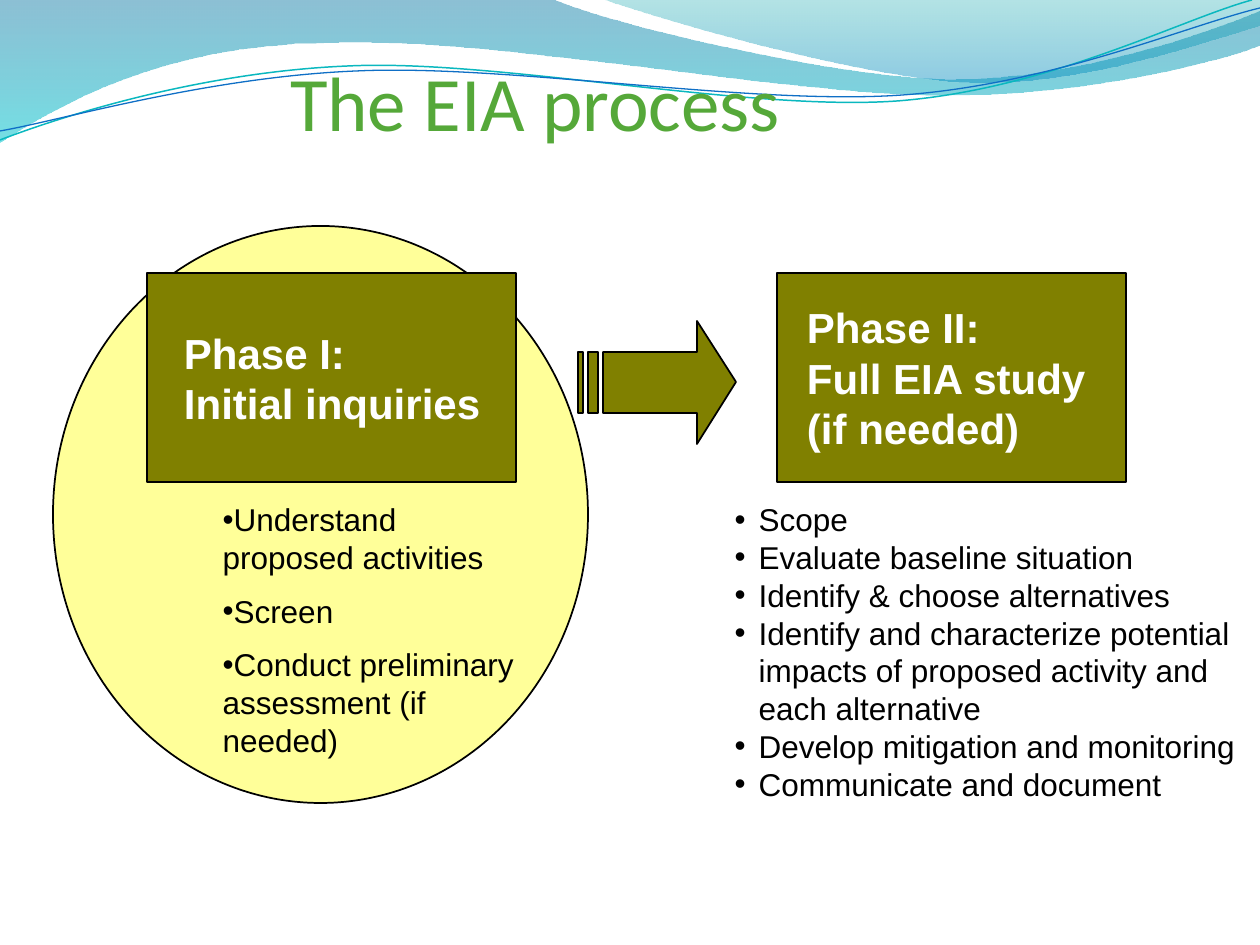
from dataclasses import dataclass

from lxml import etree
from pptx import Presentation
from pptx.dml.color import RGBColor
from pptx.enum.shapes import MSO_SHAPE
from pptx.enum.text import MSO_ANCHOR, MSO_AUTO_SIZE, PP_ALIGN
from pptx.oxml.ns import qn
from pptx.util import Emu, Pt

OVAL, RECTANGLE = MSO_SHAPE.OVAL, MSO_SHAPE.RECTANGLE
MIDDLE, BOTTOM, TOP = MSO_ANCHOR.MIDDLE, MSO_ANCHOR.BOTTOM, MSO_ANCHOR.TOP
LEFT, CENTER = PP_ALIGN.LEFT, PP_ALIGN.CENTER
TWO_CONTENT = 3


def px(length: float) -> Emu:
    return Emu(round(length * 914400 / 126))


@dataclass(frozen=True)
class Theme:
    title: str = "55A839"
    ink: str = "000000"
    light: str = "FFFFFF"
    olive: str = "808000"
    yellow: str = "FFFF99"
    title_font: str = "Calibri"
    body_font: str = "Arial"
    title_size: int = 44
    phase_size: int = 24
    list_size: int = 18


THEME = Theme()


@dataclass(frozen=True)
class Frame:
    left: int
    top: int
    width: int
    height: int

    def emu(self) -> tuple:
        return tuple(map(px, (self.left, self.top, self.width, self.height)))


@dataclass(frozen=True)
class Stop:
    color: str
    opacity: int


@dataclass(frozen=True)
class Wave:
    """Start point, then steps: 2 numbers are a line, 6 a Bézier curve."""
    start: tuple
    steps: tuple
    stops: tuple = ()
    line: str = ""
    weight: float = 0


@dataclass(frozen=True)
class Phase:
    heading: str
    box: Frame
    inset: int
    items: tuple
    list_frame: Frame
    margin: int = 0
    hanging: int = 0
    gap: int = 0


WAVES = (
    Wave((0, 0), ((554, 0), (600, 21, 837, 79, 955, 79),
                  (1074, 79, 1207, 33, 1260, 11), (1260, 45),
                  (1239, 55, 1096, 96, 940, 95), (783, 95, 481, 35, 324, 43),
                  (163, 45, 58, 105, 0, 142)),
         stops=(Stop("0074A1", 45), Stop("00C6CF", 55))),
    Wave((604, 0), ((642, 14, 859, 78, 969, 82),
                    (1079, 87, 1211, 40, 1260, 26), (1260, 0)),
         stops=(Stop("00A1A9", 30), Stop("008BBF", 45))),
    Wave((0, 140), ((60, 117, 199, 72, 349, 66),
                    (498, 59, 747, 112, 898, 101),
                    (1050, 89, 1182, 19, 1252, 0)),
         line="0AB8BF", weight=0.85),
    Wave((0, 131), ((59, 121, 207, 77, 357, 71),
                    (508, 64, 752, 106, 903, 95),
                    (1053, 84, 1186, 26, 1260, 8)),
         line="0F6FC6", weight=0.75),
)

PHASES = (
    Phase("Phase I:\nInitial inquiries", Frame(147, 273, 369, 209), 37,
          ("Understand proposed activities", "Screen",
           "Conduct preliminary assessment (if needed)"),
          Frame(210, 494, 325, 277), gap=9),
    Phase("Phase II:\nFull EIA study \n(if needed)", Frame(777, 273, 349, 209), 30,
          ("Scope", "Evaluate baseline situation",
           "Identify & choose alternatives",
           "Identify and characterize potential impacts of proposed activity "
           "and each alternative",
           "Develop mitigation and monitoring", "Communicate and document"),
          Frame(714, 494, 536, 315), margin=32, hanging=24),
)

ARROW_HEAD = ((697, 321), (697, 352), (603, 352), (603, 413),
              (697, 413), (697, 444), (736, 382))
ARROW_STRIPES = ((588, 598), (578, 583))


def add_outline(page, contours, close: bool = True):
    scaled = [[(px(x), px(y)) for x, y in contour] for contour in contours]
    builder = page.shapes.build_freeform(*scaled[0][0], scale=1.0)
    for index, contour in enumerate(scaled):
        if index:
            builder.move_to(*contour[0])
        builder.add_line_segments(contour[1:], close=close)
    shape = builder.convert_to_shape()
    shape.shadow.inherit = False
    return shape


def bend(shape, steps: tuple) -> None:
    """Turn the segments that have control points into Bézier curves."""
    for segment, step in zip(list(shape.element.iter(qn("a:lnTo"))), steps):
        if len(step) == 2:
            continue
        segment.tag = qn("a:cubicBezTo")
        controls = [etree.Element(qn("a:pt"), x=str(px(x) - shape.left), y=str(px(y) - shape.top))
                    for x, y in (step[:2], step[2:4])]
        for index, control in enumerate(controls):
            segment.insert(index, control)


def paint(shape, color: str) -> None:
    shape.shadow.inherit = False
    shape.fill.solid()
    shape.fill.fore_color.rgb = RGBColor.from_string(color)
    shape.line.color.rgb = RGBColor.from_string(THEME.ink)
    shape.line.width = Pt(1)


def add_wave(page, wave: Wave) -> None:
    anchors = [wave.start, *(step[-2:] for step in wave.steps)]
    shape = add_outline(page, [anchors], close=bool(wave.stops))
    bend(shape, wave.steps)
    if not wave.stops:
        shape.fill.background()
        shape.line.color.rgb = RGBColor.from_string(wave.line)
        shape.line.width = Pt(wave.weight)
        return
    shape.line.fill.background()
    shape.fill.gradient()
    shape.fill.gradient_angle = 270
    for position, (target, stop) in enumerate(zip(shape.fill.gradient_stops, wave.stops)):
        target.position = position
        target.color.rgb = RGBColor.from_string(stop.color)
    for color, stop in zip(shape.element.iter(qn("a:srgbClr")), wave.stops):
        etree.SubElement(color, qn("a:alpha"), val=str(stop.opacity * 1000))


def style(para, font: str, size: int, color: str, bold: bool = False) -> None:
    para.font.name, para.font.size, para.font.bold = font, Pt(size), bold
    para.font.color.rgb = RGBColor.from_string(color)


def place(holder, frame: Frame, anchor) -> None:
    """Move a placeholder and bring it in front of the drawn shapes."""
    holder.left, holder.top, holder.width, holder.height = frame.emu()
    holder.text_frame.auto_size = MSO_AUTO_SIZE.NONE
    holder.text_frame.vertical_anchor = anchor
    holder.element.getparent().append(holder.element)


def add_phase_box(page, phase: Phase) -> None:
    box = page.shapes.add_shape(RECTANGLE, *phase.box.emu())
    paint(box, THEME.olive)
    box.text_frame.word_wrap = False
    box.text_frame.vertical_anchor = MIDDLE
    box.text_frame.margin_left = px(phase.inset)
    para = box.text_frame.paragraphs[0]
    para.text, para.alignment = phase.heading, LEFT
    style(para, THEME.body_font, THEME.phase_size, THEME.light, bold=True)


def fill_list(holder, phase: Phase) -> None:
    place(holder, phase.list_frame, TOP)
    holder.text_frame.text = "\n".join(phase.items)
    for index, para in enumerate(holder.text_frame.paragraphs):
        para.space_before = Pt(phase.gap if index else 0)
        style(para, THEME.body_font, THEME.list_size, THEME.ink)
        properties = para._p.get_or_add_pPr()
        properties.set("marL", str(px(phase.margin)))
        properties.set("indent", str(-px(phase.hanging)))
        bullet = etree.Element(qn("a:buChar"), char="•")
        properties.find(qn("a:defRPr")).addprevious(bullet)


def main() -> None:
    deck = Presentation()
    deck.slide_width, deck.slide_height = px(1260), px(945)
    page = deck.slides.add_slide(deck.slide_layouts[TWO_CONTENT])
    title, *lists = page.placeholders

    # Wave banner
    for wave in WAVES:
        add_wave(page, wave)

    # Title
    place(title, Frame(0, 63, 1071, 84), BOTTOM)
    frame = title.text_frame
    frame.margin_left = frame.margin_right = frame.margin_bottom = 0
    frame.text = "The EIA process"
    frame.paragraphs[0].alignment = CENTER
    style(frame.paragraphs[0], THEME.title_font, THEME.title_size, THEME.title)

    # Highlight behind the first phase
    paint(page.shapes.add_shape(OVAL, *Frame(53, 226, 535, 577).emu()), THEME.yellow)

    # Phases and their steps
    for phase, holder in zip(PHASES, lists):
        add_phase_box(page, phase)
        fill_list(holder, phase)

    # Striped arrow between the phases
    stripes = [((left, 352), (left, 413), (right, 413), (right, 352))
               for left, right in ARROW_STRIPES]
    paint(add_outline(page, [ARROW_HEAD, *stripes]), THEME.olive)

    deck.save("out.pptx")


if __name__ == "__main__":
    main()
